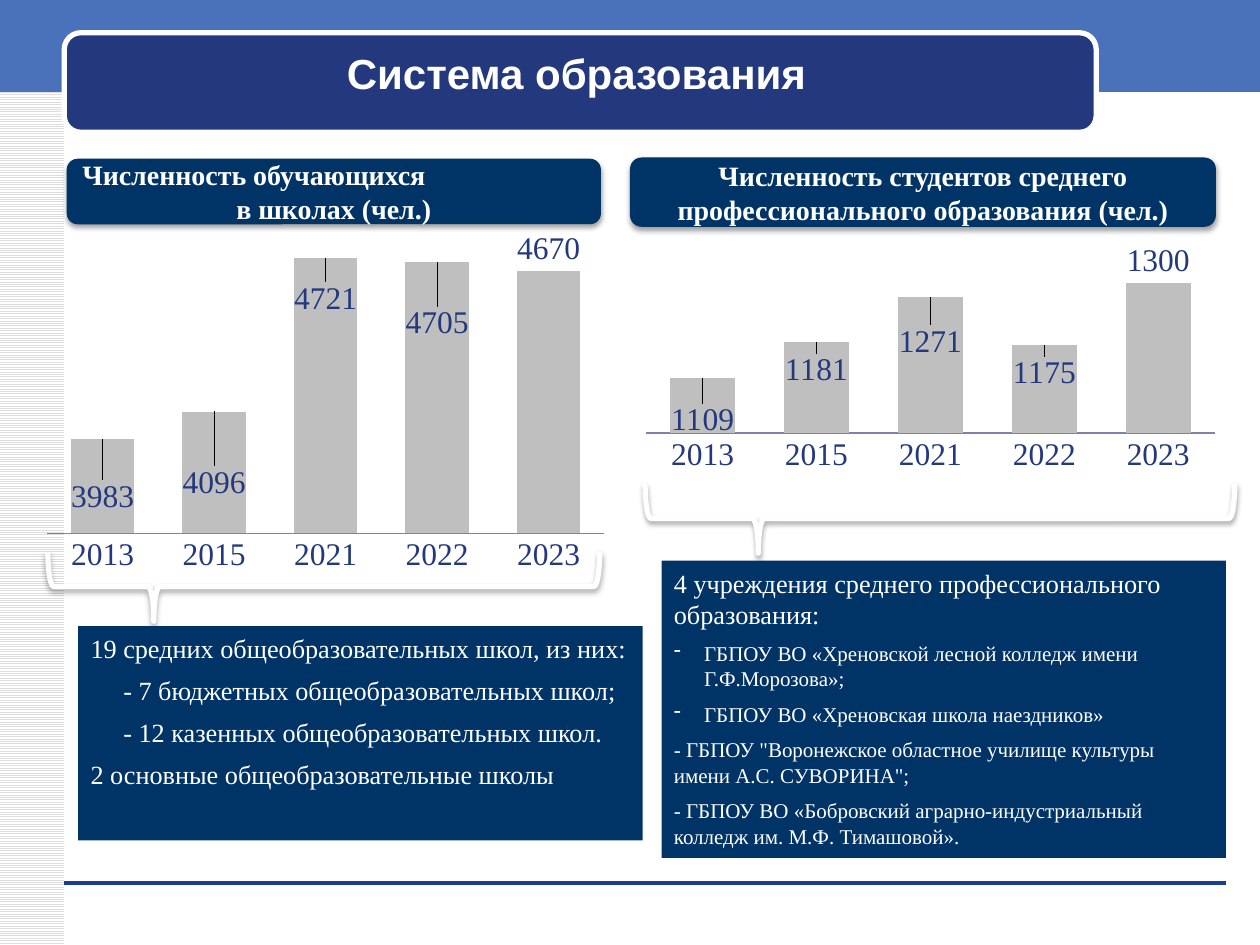
from lxml import etree
from pptx import Presentation
from pptx.chart.data import CategoryChartData
from pptx.dml.color import RGBColor
from pptx.enum.chart import XL_CHART_TYPE, XL_LABEL_POSITION, XL_TICK_MARK
from pptx.enum.dml import MSO_PATTERN
from pptx.enum.shapes import MSO_CONNECTOR, MSO_SHAPE
from pptx.enum.text import MSO_ANCHOR, PP_ALIGN
from pptx.oxml import parse_xml
from pptx.oxml.ns import nsdecls, qn
from pptx.util import Inches, Pt

COLORS = {"white": "FFFFFF", "hatch": "DDDDDD", "band": "4972BB", "rule": "1A3D97",
          "title": "23387D", "panel": "003366", "bar": "BFBFBF", "axis": "8080A8"}
SERIF = "Times New Roman"
YEARS = ["2013", "2015", "2021", "2022", "2023"]


def color(name):
    return RGBColor.from_string(COLORS[name])


def add_box(slide, kind, box, fill=None, line=None):
    shape = slide.shapes.add_shape(kind, *map(Inches, box))
    shape.shadow.inherit = False
    if fill:
        shape.fill.solid()
        shape.fill.fore_color.rgb = color(fill)
    else:
        shape.fill.background()
    if line:
        shape.line.color.rgb = color(line)
        shape.line.width = Pt(3)
    else:
        shape.line.fill.background()
    return shape


def add_soft_shadow(shape, opacity):
    effects = shape._element.spPr.find(qn("a:effectLst"))
    effects.append(parse_xml(
        f'<a:outerShdw {nsdecls("a")} blurRad="{Pt(3.1)}" dist="{Pt(1.7)}" dir="5400000" '
        f'rotWithShape="0"><a:srgbClr val="000000"><a:alpha val="{opacity * 1000}"/>'
        '</a:srgbClr></a:outerShdw>'))


def style_paragraph(paragraph, text, size, alignment, font=SERIF, bold=False):
    paragraph.text = text
    paragraph.alignment = alignment
    for run in paragraph.runs:
        run.font.size = Pt(size)
        run.font.name = font
        run.font.bold = bold
        run.font.color.rgb = color("white")


def set_indent(paragraph, left, first=0, bullet=None):
    properties = paragraph._p.get_or_add_pPr()
    properties.set("marL", str(Inches(left)))
    properties.set("indent", str(Inches(first)))
    if bullet:
        etree.SubElement(properties, qn("a:buChar")).set("char", bullet)


def add_frame(slide):
    """Side hatching, top band and bottom rule."""
    hatch = add_box(slide, MSO_SHAPE.RECTANGLE, (0, 0, 0.51, 7.5))
    hatch.fill.patterned()
    hatch.fill.pattern = MSO_PATTERN.LIGHT_HORIZONTAL
    hatch.fill.fore_color.rgb = color("hatch")
    hatch.fill.back_color.rgb = color("white")
    add_box(slide, MSO_SHAPE.RECTANGLE, (0, -0.03, 10, 0.76), "band")
    rule = slide.shapes.add_connector(
        MSO_CONNECTOR.STRAIGHT, Inches(0.51), Inches(7.01), Inches(9.73), Inches(7.01))
    rule.line.color.rgb = color("rule")
    rule.line.width = Pt(0)
    etree.SubElement(rule._element.spPr, qn("a:effectLst"))


def add_title(slide, box, text):
    left, top, width, height = box
    add_box(slide, MSO_SHAPE.ROUNDED_RECTANGLE, box, "title", "white")
    title = slide.shapes.add_textbox(
        Inches(left - 0.03), Inches(top + 0.07), Inches(width), Inches(0.5))
    title.text_frame.word_wrap = True
    style_paragraph(title.text_frame.paragraphs[0], text, 24, PP_ALIGN.CENTER, "Arial", True)


def add_heading(slide, box, lines):
    """Lines are pairs of text and alignment."""
    shape = add_box(slide, MSO_SHAPE.ROUNDED_RECTANGLE, box, "panel")
    add_soft_shadow(shape, 38)
    frame = shape.text_frame
    frame.word_wrap = True
    frame.vertical_anchor = MSO_ANCHOR.MIDDLE
    for index, (text, alignment) in enumerate(lines):
        paragraph = frame.add_paragraph() if index else frame.paragraphs[0]
        style_paragraph(paragraph, text, 16, alignment, bold=True)


def add_brace(slide, box):
    """Brace that lies along the box, with its point down."""
    left, top, width, height = box
    brace = add_box(slide, MSO_SHAPE.LEFT_BRACE,
                    (left + (width - height) / 2, top - (width - height) / 2, height, width),
                    line="white")
    brace.rotation = 270
    brace.adjustments[0] = 0.083
    brace.adjustments[1] = 0.192
    add_soft_shadow(brace, 35)


def add_panel(slide, box, items):
    """Items are tuples of text, size, left indent, first-line indent and bullet."""
    shape = add_box(slide, MSO_SHAPE.RECTANGLE, box, "panel")
    frame = shape.text_frame
    frame.word_wrap = True
    frame.vertical_anchor = MSO_ANCHOR.TOP
    for index, (text, size, *indent) in enumerate(items):
        paragraph = frame.add_paragraph() if index else frame.paragraphs[0]
        if indent:
            set_indent(paragraph, *indent)
        style_paragraph(paragraph, text, size, PP_ALIGN.LEFT)
        if index:
            paragraph.space_before = Pt(6)


def manual_layout(values, inner=False):
    settings = {"layoutTarget": "inner", "xMode": "edge", "yMode": "edge"} if inner else {}
    settings.update(values)
    parts = "".join(f'<c:{key} val="{value}"/>' for key, value in settings.items())
    return parse_xml(f'<c:layout {nsdecls("c")}><c:manualLayout>{parts}'
                     '</c:manualLayout></c:layout>')


def add_column_chart(slide, box, values, limits, plot_box, label_drops):
    """Label drops move the first labels down by a share of the chart height."""
    data = CategoryChartData()
    data.categories = YEARS
    data.add_series("Series 1", values)
    chart = slide.shapes.add_chart(
        XL_CHART_TYPE.COLUMN_CLUSTERED, *map(Inches, box), data).chart
    chart.has_legend = False
    chart.has_title = False
    chart.font.size = Pt(18)
    chart.font.name = SERIF
    chart.font.color.rgb = color("title")
    chart.category_axis.major_tick_mark = XL_TICK_MARK.NONE
    chart.category_axis.format.line.color.rgb = color("axis")
    axis = chart.value_axis
    axis.minimum_scale, axis.maximum_scale = limits
    axis.has_major_gridlines = False
    axis.visible = False

    plot = chart.plots[0]
    plot.gap_width = 75
    plot.vary_by_categories = False
    series = plot.series[0]
    series.format.fill.solid()
    series.format.fill.fore_color.rgb = color("bar")
    series.data_labels.show_value = True
    series.data_labels.position = XL_LABEL_POSITION.OUTSIDE_END
    for index in range(len(label_drops)):
        series.points[index].data_label.position = XL_LABEL_POSITION.OUTSIDE_END
    for label, drop in zip(chart._chartSpace.xpath(".//c:dLbl"), label_drops):
        label.insert(1, manual_layout({"x": 0, "y": drop}))

    plot_area = chart._chartSpace.chart.plotArea
    for layout in plot_area.findall(qn("c:layout")):
        plot_area.remove(layout)
    plot_area.insert(0, manual_layout(dict(zip("xywh", plot_box)), inner=True))


def add_schools(slide):
    add_brace(slide, (0.38, 4.38, 4.38, 0.55))
    add_panel(slide, (0.62, 4.97, 4.48, 1.7), [
        ("19 средних общеобразовательных школ, из них:", 15),
        ("- 7 бюджетных общеобразовательных школ;", 15, 0.26),
        ("- 12 казенных общеобразовательных школ.", 15, 0.26),
        ("2 основные общеобразовательные школы", 15)])
    add_column_chart(slide, (0.28, 1.84, 4.61, 2.75), (3983, 4096, 4721, 4705, 4670),
                     (3600, 4800), (0.02, 0.02, 0.96, 0.85), (0.23, 0.27, 0.18, 0.24))
    add_heading(slide, (0.53, 1.26, 4.24, 0.52), [
        ("Численность обучающихся", PP_ALIGN.LEFT), ("в школах (чел.)", PP_ALIGN.CENTER)])


def add_colleges(slide):
    add_heading(slide, (5, 1.25, 4.65, 0.55), [
        ("Численность студентов среднего профессионального образования (чел.)",
         PP_ALIGN.CENTER)])
    add_column_chart(slide, (4.98, 1.89, 4.81, 2.21), (1109, 1181, 1271, 1175, 1300),
                     (1000, 1350), (0.03, 0.07, 0.94, 0.63), (0.23, 0.18, 0.24, 0.18))
    add_brace(slide, (5.12, 3.84, 4.68, 0.55))
    add_panel(slide, (5.25, 4.45, 4.48, 2.36), [
        ("4 учреждения среднего профессионального образования:", 15),
        ("ГБПОУ ВО «Хреновской лесной колледж имени Г.Ф.Морозова»;", 12, 0.24, -0.24, "-"),
        ("ГБПОУ ВО «Хреновская школа наездников»", 12, 0.24, -0.24, "-"),
        ("- ГБПОУ \"Воронежское областное училище культуры имени А.С. СУВОРИНА\";", 12),
        ("- ГБПОУ ВО «Бобровский аграрно-индустриальный колледж им. М.Ф. Тимашовой».", 12)])


def main():
    presentation = Presentation()
    presentation.slide_width = Inches(10)
    presentation.slide_height = Inches(7.5)
    slide = presentation.slides.add_slide(presentation.slide_layouts[6])
    add_frame(slide)
    add_title(slide, (0.51, 0.26, 8.19, 0.79), "Система образования")
    add_schools(slide)
    add_colleges(slide)
    presentation.save("out.pptx")


if __name__ == "__main__":
    main()
